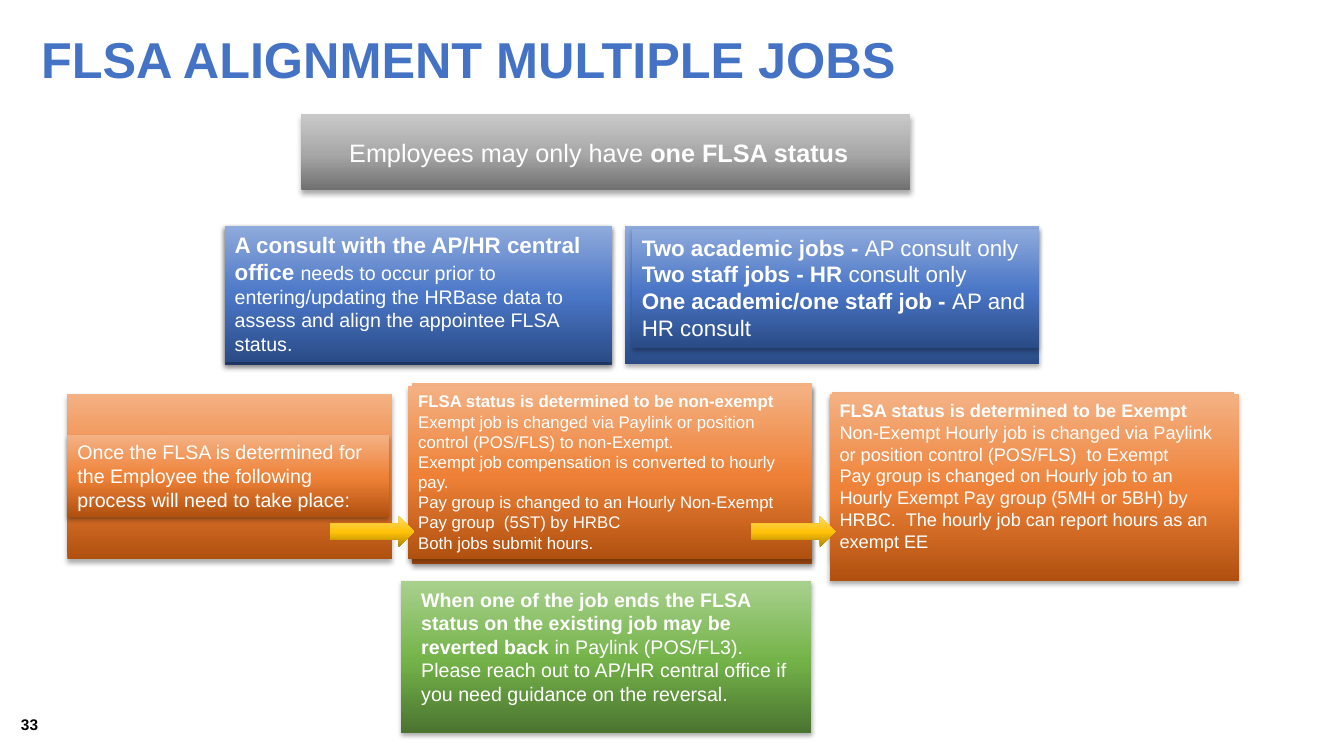
"""Build the slide on FLSA alignment for employees with multiple jobs."""
import dataclasses
import typing

import lxml.etree
import pptx
import pptx.dml.color
import pptx.enum.shapes
import pptx.enum.text
import pptx.oxml.ns
import pptx.util

Pt = pptx.util.Pt
qn = pptx.oxml.ns.qn
SHAPE = pptx.enum.shapes.MSO_SHAPE
ANCHOR = pptx.enum.text.MSO_ANCHOR
ALIGN = pptx.enum.text.PP_ALIGN

FONT = "Arial"
INSET = 7.2
COLORS = {"title": "4472C4", "white": "FFFFFF", "black": "000000"}
GRADIENTS = {
    "gray": {0: "6F6F6F", 48: "A8A8A8", 100: "C9C9C9"},
    "blue": {0: "2A4B86", 48: "4A76C6", 100: "8FAADC"},
    "orange": {0: "B0500F", 48: "EE8137", 100: "F4B183"},
    "green": {0: "4B7430", 48: "74B349", 100: "A9D18E"},
    "gold": {0: "AB8100", 48: "FFC208", 100: "FFD966"},
}


class Run(typing.NamedTuple):
    text: str
    size: float
    bold: bool = False


Paragraphs = tuple[tuple[Run, ...], ...]


@dataclasses.dataclass(frozen=True)
class Box:
    left: float
    top: float
    width: float
    height: float
    gradient: str = ""
    paragraphs: Paragraphs = ()
    color: str = "white"
    middle: bool = False
    centered: bool = False
    right_inset: float = INSET
    preset: SHAPE = SHAPE.RECTANGLE
    shadow: bool = True


def headed(size: float, heading: str, *lines: str) -> Paragraphs:
    return ((Run(heading, size, True),), *((Run(line, size),) for line in lines))


BOXES = (
    Box(22.3, 14.4, 863.3, 54, color="title", middle=True,
        paragraphs=headed(36, "FLSA ALIGNMENT MULTIPLE JOBS")),
    Box(215.3, 81.4, 434.9, 54.7, "gray", middle=True, centered=True, right_inset=17.2,
        paragraphs=((Run("Employees may only have ", 18), Run("one FLSA status", 18, True)),)),
    Box(160.6, 161.3, 276.5, 99.4, "blue"),
    Box(48.2, 281.5, 231.8, 118.1, "orange"),
    Box(446.4, 161.3, 295.9, 98.6, "blue"),
    Box(294.5, 273.6, 285.8, 129.6, "orange"),
    Box(594, 280.1, 287.3, 119.5, "orange"),
    Box(286.6, 414.7, 293, 108.7, "green"),
    Box(160.6, 161.3, 276.5, 97.2, "blue", ((
        Run("A consult with the AP/HR central office ", 16, True),
        Run("needs to occur prior to entering/updating the HRBase data to assess "
            "and align the appointee FLSA status.", 14)),)),
    Box(451.4, 163.4, 290.9, 85, "blue", (
        (Run("Two academic jobs - ", 16, True), Run("AP consult only", 16)),
        (Run("Two staff jobs - HR ", 16, True), Run("consult only", 16)),
        (Run("One academic/one staff job - ", 16, True), Run("AP and HR consult", 16)))),
    Box(48.2, 311, 229.7, 58.3, "orange", ((
        Run("Once the FLSA is determined for the Employee the following process "
            "will need to take place:", 14),),)),
    Box(291.6, 275.8, 288.7, 123.8, "orange", headed(
        12, "FLSA status is determined to be non-exempt",
        "Exempt job is changed via Paylink or position control (POS/FLS) to non-Exempt.",
        "Exempt job compensation is converted to hourly pay.",
        "Pay group is changed to an Hourly Non-Exempt Pay group  (5ST) by HRBC",
        "Both jobs submit hours.")),
    Box(592.6, 281.5, 292.3, 133.2, "orange", headed(
        13, "FLSA status is determined to be Exempt",
        "Non-Exempt Hourly job is changed via Paylink or position control (POS/FLS)  to Exempt",
        "Pay group is changed on Hourly job to an Hourly Exempt Pay group (5MH or 5BH) by HRBC.  "
        "The hourly job can report hours as an exempt EE")),
    Box(293.8, 416.2, 285.8, 120, paragraphs=((
        Run("When one of the job ends the FLSA status on the existing job may be "
            "reverted back ", 14, True),
        Run("in Paylink (POS/FL3).  Please reach out to AP/HR central office if you need "
            "guidance on the reversal.", 14)),)),
    *(Box(left, 368.6, 60.5, 22.3, "gold", preset=SHAPE.RIGHT_ARROW, shadow=False)
      for left in (235.4, 536.4)),
    Box(7.9, 505.4, 223.9, 23.8, color="black", middle=True, paragraphs=headed(11, "33")),
)


def add_color(parent: lxml.etree._Element, color: str) -> lxml.etree._Element:
    return lxml.etree.SubElement(parent, qn("a:srgbClr"), val=color)


def fill_gradient(sp: typing.Any, stops: dict[int, str]) -> None:
    sp.fill.gradient()
    sp.fill.gradient_angle = 90
    gs_lst = next(sp._element.spPr.iter(qn("a:gsLst")))
    for gs in list(gs_lst):
        gs_lst.remove(gs)
    for pos, color in stops.items():
        add_color(lxml.etree.SubElement(gs_lst, qn("a:gs"), pos=str(pos * 1000)), color)


def add_shadow(sp: typing.Any) -> None:
    effects = sp._element.spPr.find(qn("a:effectLst"))
    shadow = lxml.etree.SubElement(
        effects, qn("a:outerShdw"), blurRad=str(int(Pt(3.5))), dist=str(int(Pt(2.2))),
        dir="5400000", algn="ctr", rotWithShape="0")
    color = add_color(shadow, COLORS["black"])
    lxml.etree.SubElement(color, qn("a:alpha"), val="32000")


def write_text(sp: typing.Any, box: Box) -> None:
    tf = sp.text_frame
    tf.word_wrap = True
    tf.vertical_anchor = ANCHOR.MIDDLE if box.middle else ANCHOR.TOP
    tf.margin_right = Pt(box.right_inset)
    for i, runs in enumerate(box.paragraphs):
        p = tf.add_paragraph() if i else tf.paragraphs[0]
        p.alignment = ALIGN.CENTER if box.centered else ALIGN.LEFT
        for run in runs:
            r = p.add_run()
            r.text = run.text
            r.font.name = FONT
            r.font.size = Pt(run.size)
            r.font.bold = run.bold
            r.font.color.rgb = pptx.dml.color.RGBColor.from_string(COLORS[box.color])


def draw_box(shapes: typing.Any, box: Box) -> None:
    area = [Pt(v) for v in (box.left, box.top, box.width, box.height)]
    if box.gradient:
        sp = shapes.add_shape(box.preset, *area)
        fill_gradient(sp, GRADIENTS[box.gradient])
        sp.line.fill.background()
        sp.shadow.inherit = False
        if box.shadow:
            add_shadow(sp)
    else:
        sp = shapes.add_textbox(*area)
    if box.paragraphs:
        write_text(sp, box)


def main() -> None:
    prs = pptx.Presentation()
    prs.slide_width, prs.slide_height = Pt(960), Pt(540)
    s = prs.slides.add_slide(prs.slide_layouts[6])
    for box in BOXES:
        draw_box(s.shapes, box)
    prs.save("out.pptx")


if __name__ == "__main__":
    main()
